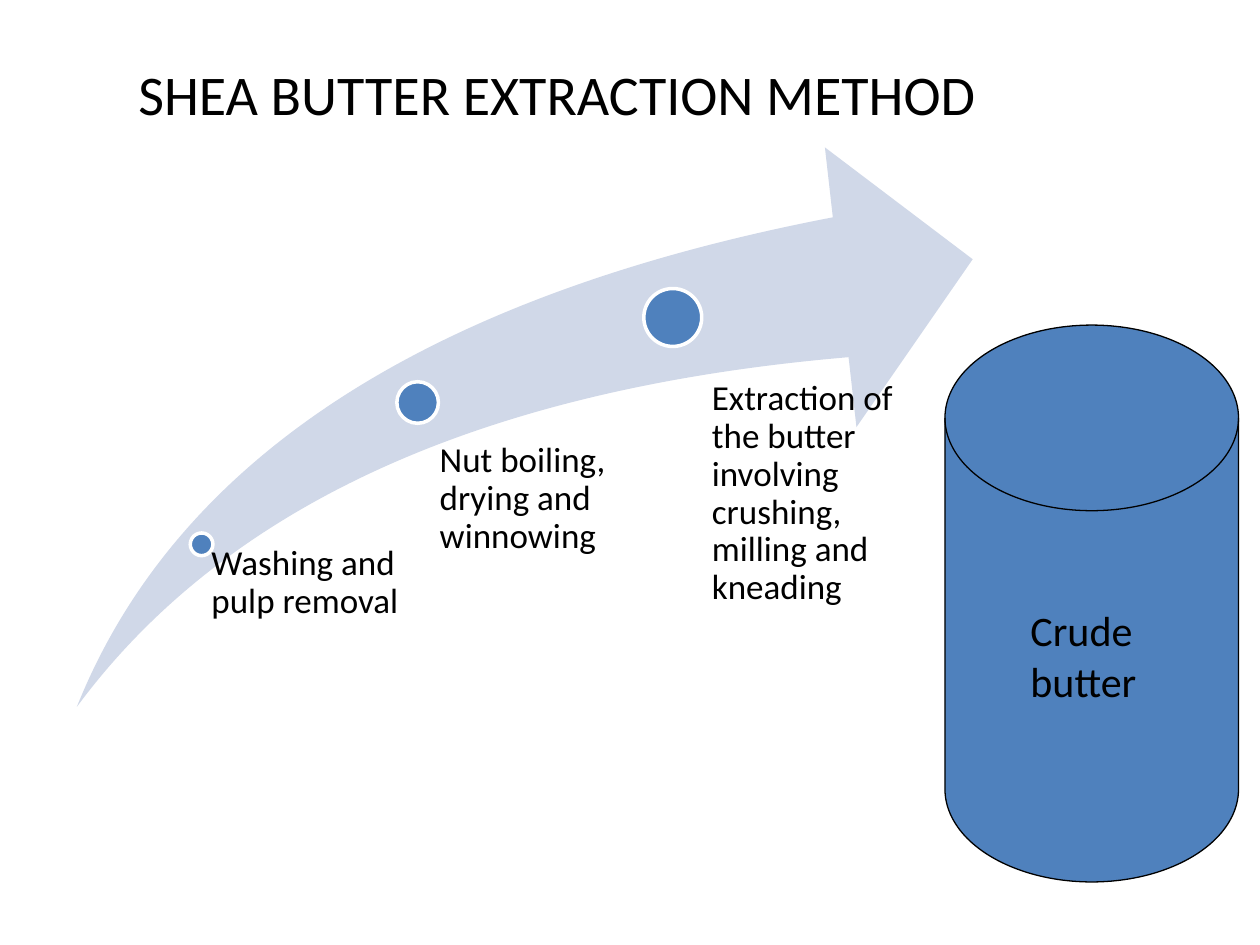
from pptx import Presentation
from pptx.dml.color import RGBColor
from pptx.enum.shapes import MSO_SHAPE
from pptx.util import Inches, Pt

FONT = "Calibri"
COLORS = {"text": "000000", "swoosh": "D0D8E8", "accent": "4F81BD",
          "dot_line": "FFFFFF", "drum_line": "000000"}

# dot box, caption box, caption left inset, caption
STEPS = [
    ((1.51, 4.23, 0.18, 0.18), (1.58, 4.33, 1.66, 1.28), 0.1,
     "Washing and pulp removal"),
    ((3.15, 3.03, 0.33, 0.33), (3.31, 3.51, 1.71, 1.79), 0.18,
     "Nut boiling, drying and winnowing"),
    ((5.11, 2.29, 0.46, 0.46), (5.41, 3.02, 1.71, 2.47), 0.24,
     "Extraction of the butter involving crushing, milling and kneading"),
]


def color(key):
    return RGBColor.from_string(COLORS[key])


def add_figure(slide, kind, box, fill, line=None, line_width=0):
    figure = slide.shapes.add_shape(kind, *map(Inches, box))
    figure.shadow.inherit = False
    figure.fill.solid()
    figure.fill.fore_color.rgb = color(fill)
    if line:
        figure.line.color.rgb = color(line)
        figure.line.width = Pt(line_width)
    else:
        figure.line.fill.background()
    return figure


def add_label(slide, box, text, size):
    """Add a wrapped one-paragraph text box and return its text frame."""
    frame = slide.shapes.add_textbox(*map(Inches, box)).text_frame
    frame.word_wrap = True
    run = frame.paragraphs[0].add_run()
    run.text = text
    run.font.name = FONT
    run.font.size = Pt(size)
    run.font.color.rgb = color("text")
    return frame


def add_step(slide, dot_box, caption_box, inset, caption):
    add_figure(slide, MSO_SHAPE.OVAL, dot_box, "accent", "dot_line", 2)
    frame = add_label(slide, caption_box, caption, 20)
    frame.margin_left = Inches(inset)
    frame.margin_top = frame.margin_right = frame.margin_bottom = 0
    frame.paragraphs[0].line_spacing = 0.9


def add_process(slide, box):
    """Draw the rising arrow with its three steps."""
    swoosh = add_figure(slide, MSO_SHAPE.SWOOSH_ARROW, box, "swoosh")
    swoosh.adjustments[0] = 0.25
    swoosh.adjustments[1] = 0.25
    for step in STEPS:
        add_step(slide, *step)


def add_product(slide, box):
    """Draw the drum with its label."""
    left, top, _, _ = box
    add_figure(slide, MSO_SHAPE.FLOWCHART_MAGNETIC_DISK, box,
               "accent", "drum_line", 0.75)
    add_label(slide, (left + 0.58, top + 2.17, 1.58, 0.91), "Crude butter", 24)


def main():
    presentation = Presentation()
    presentation.slide_width = Inches(10)
    presentation.slide_height = Inches(7.5)
    slide = presentation.slides.add_slide(presentation.slide_layouts[6])
    add_label(slide, (1, 0.42, 8.33, 0.64), "SHEA BUTTER EXTRACTION METHOD", 32)
    add_process(slide, (0.61, 1.17, 7.11, 4.44))
    add_product(slide, (7.5, 2.58, 2.33, 4.42))
    presentation.save("out.pptx")


if __name__ == "__main__":
    main()
